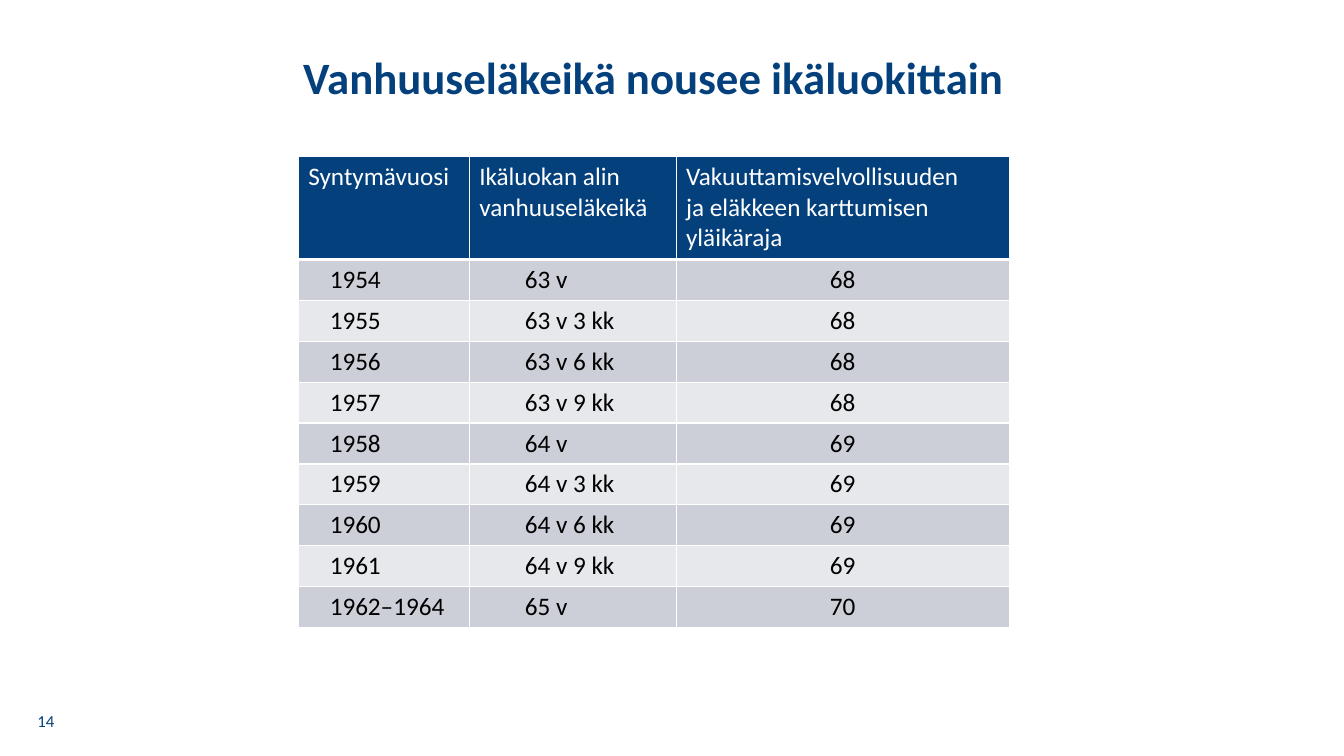
from lxml import etree
from pptx import Presentation
from pptx.dml.color import RGBColor
from pptx.enum.text import MSO_ANCHOR, MSO_AUTO_SIZE, PP_ALIGN
from pptx.oxml.ns import qn
from pptx.util import Cm, Pt

LEFT, CENTER = PP_ALIGN.LEFT, PP_ALIGN.CENTER
MIDDLE = MSO_ANCHOR.MIDDLE
NO_AUTOFIT = MSO_AUTO_SIZE.NONE

TITLE = "Vanhuuseläkeikä nousee ikäluokittain"
PAGE_NUMBER = "14"
HEADERS = [
    "Syntymävuosi",
    "Ikäluokan alin\nvanhuuseläkeikä",
    "Vakuuttamisvelvollisuuden\nja eläkkeen karttumisen\nyläikäraja",
]
AGE_LIMITS = [
    ("1954", "63 v", "68"),
    ("1955", "63 v 3 kk", "68"),
    ("1956", "63 v 6 kk", "68"),
    ("1957", "63 v 9 kk", "68"),
    ("1958", "64 v", "69"),
    ("1959", "64 v 3 kk", "69"),
    ("1960", "64 v 6 kk", "69"),
    ("1961", "64 v 9 kk", "69"),
    ("1962–1964", "65 v", "70"),
]

FONT = "Calibri"
NAVY, WHITE, BLACK = "03407C", "FFFFFF", "000000"
BANDS = ["CCCFD7", "E7E8EC"]

COLUMN_WIDTHS = [4.31, 5.21, 8.4]
HEADER_HEIGHT, ROW_HEIGHT = 2.6, 1.03
CELL_INSET = 0.25
BODY_INSETS = [0.79, 1.4, CELL_INSET]
BODY_ALIGNMENTS = [LEFT, LEFT, CENTER]


def color(hex_value):
    return RGBColor.from_string(hex_value)


def write(frame, text, size=18, ink=BLACK, bold=False, align=LEFT, spacing=1.0):
    """Fill a text frame, one paragraph per line of text."""
    frame.text = text
    for paragraph in frame.paragraphs:
        paragraph.alignment = align
        paragraph.line_spacing = spacing
        for run in paragraph.runs:
            run.font.name = FONT
            run.font.size = Pt(size)
            run.font.bold = bold
            run.font.color.rgb = color(ink)


def set_borders(cell, bottom=1):
    """Draw white cell borders; the bottom one may be wider."""
    properties = cell._tc.get_or_add_tcPr()
    widths = {"a:lnL": 1, "a:lnR": 1, "a:lnT": 1, "a:lnB": bottom}
    for position, (side, width) in enumerate(widths.items()):
        line = etree.Element(qn(side), w=str(Pt(width)))
        fill = etree.SubElement(line, qn("a:solidFill"))
        etree.SubElement(fill, qn("a:srgbClr"), val=WHITE)
        properties.insert(position, line)


def fill_cell(cell, text, background, inset=CELL_INSET, bottom=1, **text_format):
    cell.margin_left = Cm(inset)
    cell.fill.solid()
    cell.fill.fore_color.rgb = color(background)
    set_borders(cell, bottom)
    write(cell.text_frame, text, **text_format)


def add_title(slide):
    title = slide.shapes.title
    title.left, title.top, title.width, title.height = Cm(0), Cm(1.32), Cm(32.94), Cm(1.4)
    title.text_frame.auto_size = NO_AUTOFIT
    title.text_frame.vertical_anchor = MIDDLE
    write(title.text_frame, TITLE, size=32, ink=NAVY, bold=True, align=CENTER, spacing=0.9)


def add_page_number(slide):
    number = slide.shapes.add_textbox(Cm(0.51), Cm(17.65), Cm(1.3), Cm(1.02))
    number.text_frame.word_wrap = True
    number.text_frame.vertical_anchor = MIDDLE
    write(number.text_frame, PAGE_NUMBER, size=12, ink=NAVY, align=CENTER)


def add_age_table(slide):
    height = HEADER_HEIGHT + ROW_HEIGHT * len(AGE_LIMITS)
    table = slide.shapes.add_table(
        len(AGE_LIMITS) + 1, len(HEADERS),
        Cm(7.52), Cm(3.94), Cm(sum(COLUMN_WIDTHS)), Cm(height),
    ).table
    for column, width in zip(table.columns, COLUMN_WIDTHS):
        column.width = Cm(width)
    for row in table.rows:
        row.height = Cm(ROW_HEIGHT)
    table.rows[0].height = Cm(HEADER_HEIGHT)

    for c, header in enumerate(HEADERS):
        fill_cell(table.cell(0, c), header, NAVY, bottom=3, ink=WHITE)
    for r, limits in enumerate(AGE_LIMITS):
        for c, value in enumerate(limits):
            fill_cell(table.cell(r + 1, c), value, BANDS[r % 2],
                      inset=BODY_INSETS[c], align=BODY_ALIGNMENTS[c])


def main():
    presentation = Presentation()
    presentation.slide_width, presentation.slide_height = Cm(33.87), Cm(19.05)
    slide = presentation.slides.add_slide(presentation.slide_layouts[5])
    add_title(slide)
    add_page_number(slide)
    add_age_table(slide)
    presentation.save("out.pptx")


if __name__ == "__main__":
    main()
